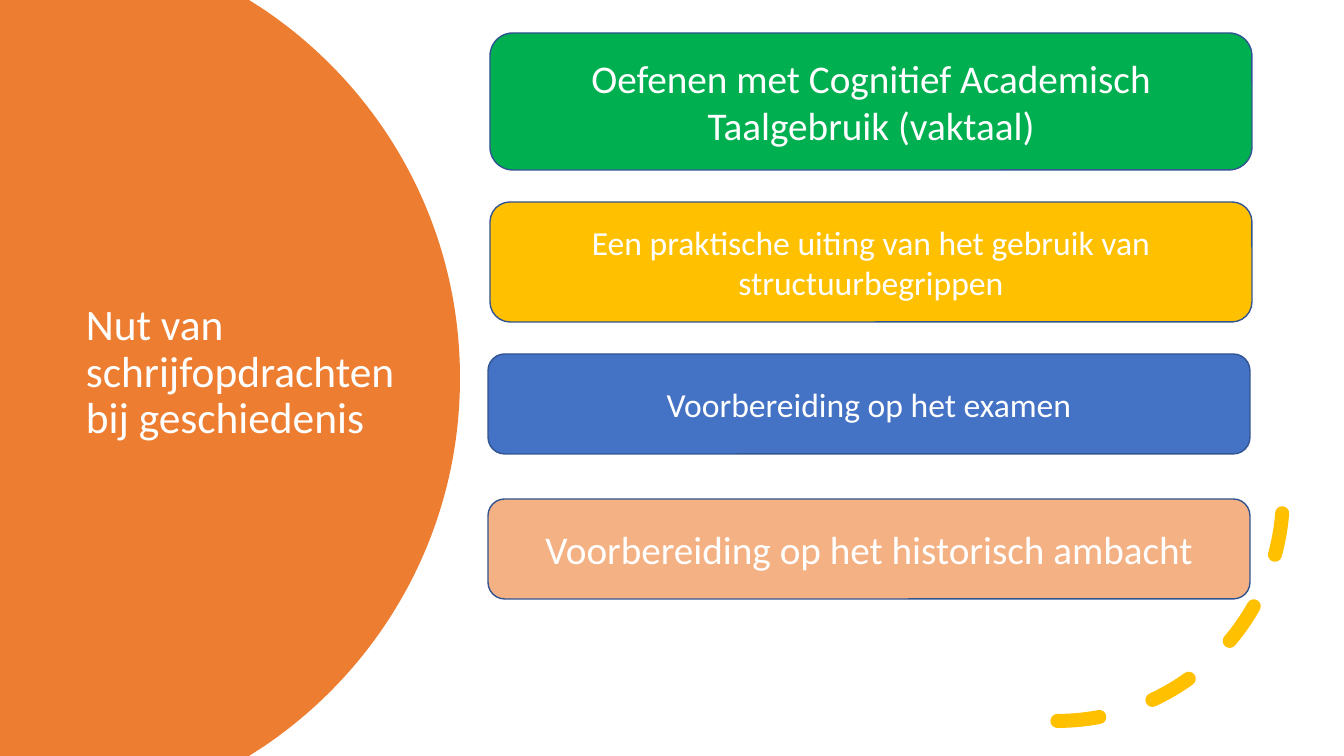
"""Build a slide on the use of writing assignments in history lessons."""
from dataclasses import dataclass

import pptx
import pptx.dml.color
import pptx.enum.dml
import pptx.enum.shapes
import pptx.enum.text
import pptx.oxml.ns
import pptx.util
from lxml import etree

SHAPE = pptx.enum.shapes.MSO_SHAPE
ALIGN = pptx.enum.text.PP_ALIGN
WIDTH, HEIGHT = 1344, 756
EMU_PER_PX = 12192000 / WIDTH
WHITE = "FFFFFF"
BOX_WIDTH = 762


@dataclass
class Benefit:
    text: str
    left: int
    top: int
    height: int
    fill: str
    size: int


BENEFITS = [
    Benefit("Oefenen met Cognitief Academisch Taalgebruik (vaktaal)", 490, 33, 137, "00B050", 28),
    Benefit("Een praktische uiting van het gebruik van structuurbegrippen", 490, 202, 120, "FFC000", 24),
    Benefit("Voorbereiding op het examen", 488, 354, 100, "4472C4", 24),
    Benefit("Voorbereiding op het historisch ambacht", 488, 499, 100, "F4B183", 28),
]


def px(n: float) -> pptx.util.Emu:
    return pptx.util.Emu(round(n * EMU_PER_PX))


def rgb(color: str) -> pptx.dml.color.RGBColor:
    return pptx.dml.color.RGBColor.from_string(color)


def paint(s, fill: str | None, line: str | None, width: int = 1) -> None:
    s.shadow.inherit = False
    for part, color in ((s.fill, fill), (s.line.fill, line)):
        if color is None:
            part.background()
        else:
            part.solid()
            part.fore_color.rgb = rgb(color)
    if line is not None:
        s.line.width = pptx.util.Pt(width)


def write(s, text: str, size: int, align: ALIGN, spacing: float = 1.0) -> None:
    tf = s.text_frame
    tf.word_wrap = True
    tf.vertical_anchor = pptx.enum.text.MSO_ANCHOR.MIDDLE
    p = tf.paragraphs[0]
    p.alignment = align
    p.line_spacing = spacing
    r = p.add_run()
    r.text = text
    for name, value in {"name": "Calibri", "size": pptx.util.Pt(size)}.items():
        setattr(r.font, name, value)
    r.font.color.rgb = rgb(WHITE)


def add_disc(slide) -> None:
    upper = [(249, 0), (263, 9), (382, 89), (460, 224)]
    lower = [(x, HEIGHT - y) for x, y in reversed(upper)]
    outline = upper + [(460, HEIGHT // 2)] + lower + [(0, HEIGHT)]
    builder = slide.shapes.build_freeform(0, 0)
    builder.add_line_segments([(px(x), px(y)) for x, y in outline], close=True)
    s = builder.convert_to_shape()
    paint(s, "ED7D31", None)
    lines = list(s._element.iter(pptx.oxml.ns.qn("a:lnTo")))
    for start in (2, 5):
        curve = etree.Element(pptx.oxml.ns.qn("a:cubicBezTo"))
        lines[start].addprevious(curve)
        for line in lines[start:start + 3]:
            curve.append(line[0])
            line.getparent().remove(line)


def add_dashed_arc(slide, left: int, top: int, size: int) -> None:
    s = slide.shapes.add_shape(SHAPE.ARC, px(left), px(top), px(size), px(size))
    paint(s, None, "FFC000", 10)
    s.line.dash_style = pptx.enum.dml.MSO_LINE.DASH
    s.line._get_or_add_ln().set("cap", "rnd")
    s._element.spPr.xfrm.set("flipV", "1")


def add_benefit(slide, b: Benefit) -> None:
    s = slide.shapes.add_shape(SHAPE.ROUNDED_RECTANGLE, px(b.left), px(b.top), px(BOX_WIDTH), px(b.height))
    paint(s, b.fill, "325491")
    write(s, b.text, b.size, ALIGN.CENTER)


def main() -> None:
    prs = pptx.Presentation()
    prs.slide_width, prs.slide_height = px(WIDTH), px(HEIGHT)
    slide = prs.slides.add_slide(prs.slide_layouts[6])
    add_disc(slide)
    title = slide.shapes.add_textbox(px(76), px(127), px(353), px(492))
    write(title, "Nut van schrijfopdrachten bij geschiedenis", 31, ALIGN.LEFT, 0.9)
    add_dashed_arc(slide, 832, 270, 451)
    for b in BENEFITS:
        add_benefit(slide, b)
    prs.save("out.pptx")


if __name__ == "__main__":
    main()
